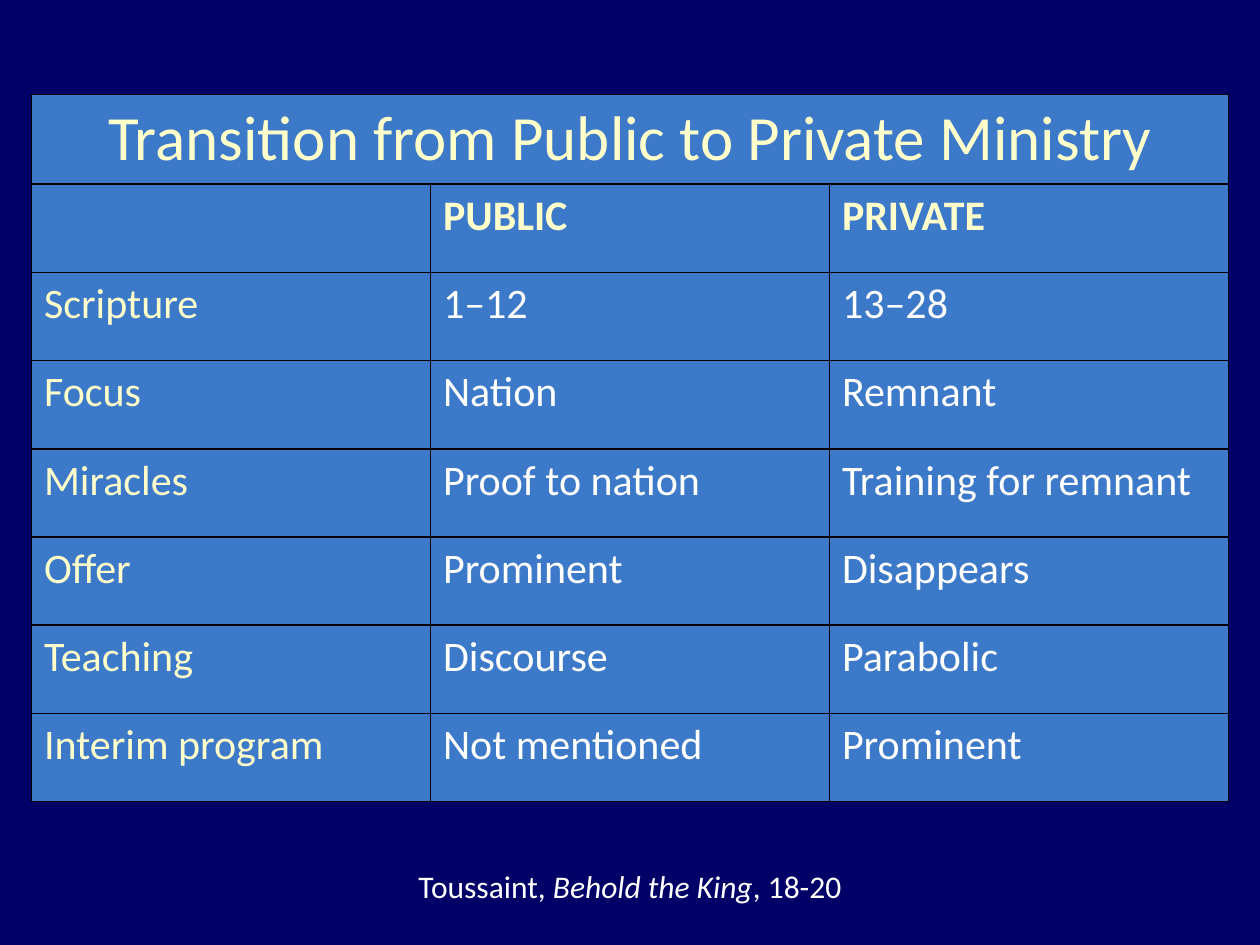
import dataclasses

import lxml.etree
import pptx
import pptx.dml.color
import pptx.enum.text
import pptx.oxml.ns
import pptx.util

Inches = pptx.util.Inches
Pt = pptx.util.Pt
RGB = pptx.dml.color.RGBColor.from_string
CENTER = pptx.enum.text.PP_ALIGN.CENTER


@dataclasses.dataclass(frozen=True)
class Theme:
    font: str = "Calibri"
    back: str = "000066"
    cell: str = "3C79C8"
    line: str = "000000"
    label: str = "FFFFCC"
    body: str = "FFFFFF"
    title_size: int = 36
    body_size: int = 24
    note_size: int = 18


THEME = Theme()
TITLE = "Transition from Public to Private Ministry"
ROWS = [
    ("", "PUBLIC", "PRIVATE"),
    ("Scripture", "1–12", "13–28"),
    ("Focus", "Nation", "Remnant"),
    ("Miracles", "Proof to nation", "Training for remnant"),
    ("Offer", "Prominent", "Disappears"),
    ("Teaching", "Discourse", "Parabolic"),
    ("Interim program", "Not mentioned", "Prominent"),
]
SOURCE = [("Toussaint, ", False), ("Behold the King", True), (", 18-20", False)]


def style(run, size, color, bold=False, italic=False):
    font = run.font
    font.name = THEME.font
    font.size = Pt(size)
    font.color.rgb = RGB(color)
    font.bold = bold
    font.italic = italic


def border(cell):
    """Draw a thin line on all four sides; call before the fill is set."""
    props = cell._tc.get_or_add_tcPr()
    qn = pptx.oxml.ns.qn
    for side in ("lnL", "lnR", "lnT", "lnB"):
        line = lxml.etree.SubElement(props, qn("a:" + side), w=str(Pt(1)))
        fill = lxml.etree.SubElement(line, qn("a:solidFill"))
        lxml.etree.SubElement(fill, qn("a:srgbClr"), val=THEME.line)


def add_grid(slide, left, top, width, height):
    count = len(ROWS[0])
    lines = [(TITLE,) + ("",) * (count - 1)] + ROWS
    frame = slide.shapes.add_table(len(lines), count, left, top, width, height)
    table = frame.table
    table.first_row = table.horz_banding = False
    table.cell(0, 0).merge(table.cell(0, count - 1))
    for r, line in enumerate(lines):
        for c, text in enumerate(line):
            cell = table.cell(r, c)
            border(cell)
            cell.fill.solid()
            cell.fill.fore_color.rgb = RGB(THEME.cell)
            if not text:
                continue
            cell.text_frame.text = text
            para = cell.text_frame.paragraphs[0]
            size = THEME.body_size
            if r == 0:
                para.alignment = CENTER
                size = THEME.title_size
            color = THEME.label if r < 2 or c == 0 else THEME.body
            style(para.runs[0], size, color, bold=r == 1)


def add_note(slide, left, top, width, height):
    frame = slide.shapes.add_textbox(left, top, width, height).text_frame
    frame.word_wrap = True
    frame.auto_size = pptx.enum.text.MSO_AUTO_SIZE.SHAPE_TO_FIT_TEXT
    para = frame.paragraphs[0]
    para.alignment = CENTER
    for text, italic in SOURCE:
        run = para.add_run()
        run.text = text
        style(run, THEME.note_size, THEME.body, italic=italic)


def main():
    deck = pptx.Presentation()
    deck.slide_width, deck.slide_height = Inches(10), Inches(7.5)
    slide = deck.slides.add_slide(deck.slide_layouts[6])
    slide.background.fill.solid()
    slide.background.fill.fore_color.rgb = RGB(THEME.back)
    add_grid(slide, Inches(0.25), Inches(0.75), Inches(9.5), Inches(5.6))
    add_note(slide, Inches(3), Inches(6.83), Inches(4), Inches(0.4))
    deck.save("out.pptx")


if __name__ == "__main__":
    main()
